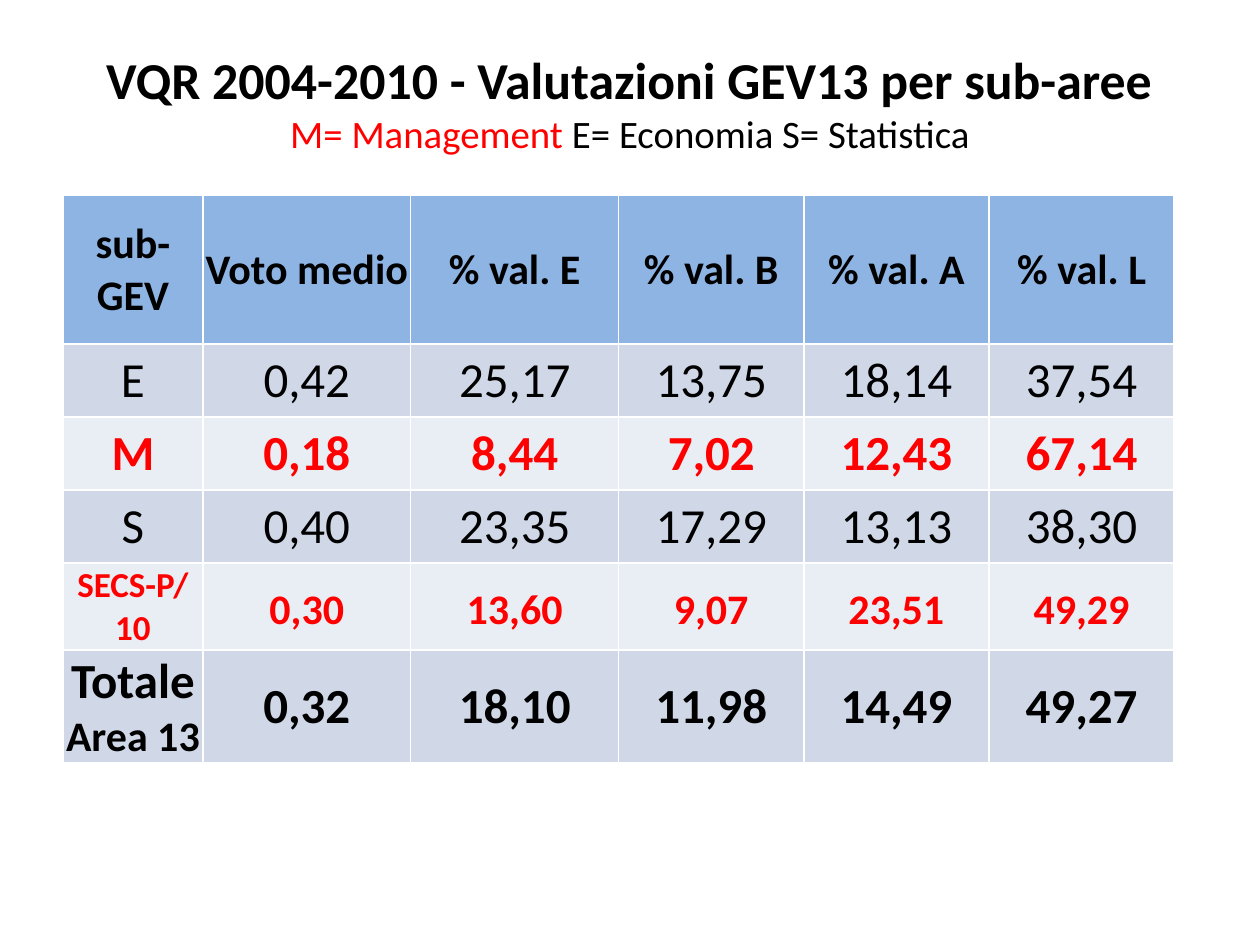
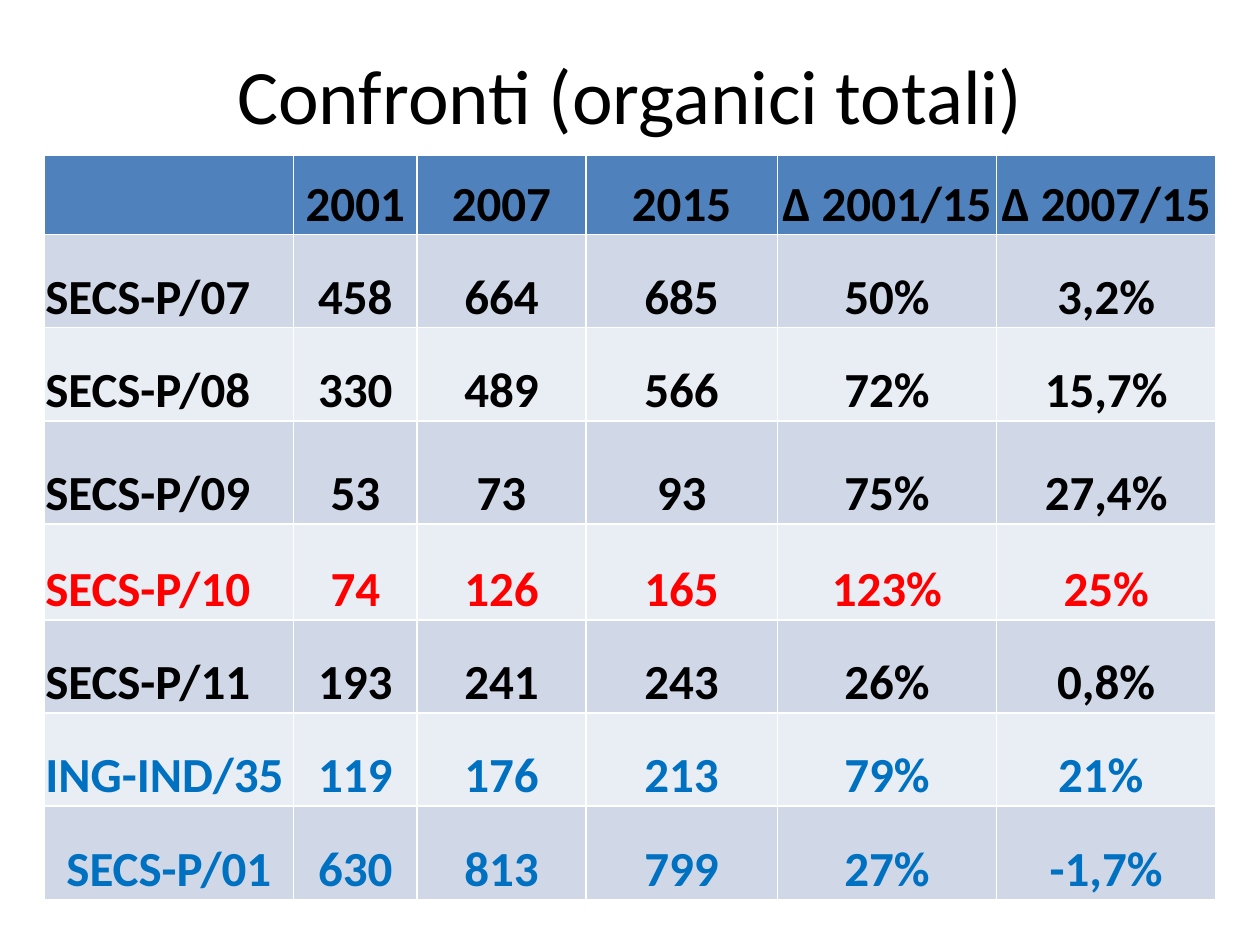
from pptx import Presentation
from pptx.dml.color import RGBColor
from pptx.enum import text
from pptx.util import Inches, Pt

FONT = "Calibri"
BLACK = RGBColor(0x00, 0x00, 0x00)
RED = RGBColor(0xFF, 0x00, 0x00)
BLUE = RGBColor(0x00, 0x70, 0xC0)
HEADER_LIGHT = RGBColor(0x8E, 0xB4, 0xE3)
HEADER_DARK = RGBColor(0x4F, 0x81, 0xBD)
BANDS = (RGBColor(0xD0, 0xD8, 0xE8), RGBColor(0xE9, 0xED, 0xF4))

TITLE_BOX = (0.5, 0.3, 9, 1.25)
TIGHT = (0.01, 0.01, 0.01, 0)
WIDE = (0.05, 0, 0.05, 0)
CENTER, LEFT = text.PP_ALIGN.CENTER, text.PP_ALIGN.LEFT
MIDDLE, BOTTOM = text.MSO_ANCHOR.MIDDLE, text.MSO_ANCHOR.BOTTOM

# Sub-area evaluations: each row has a label, its values and their format
EVALUATION_HEADER = ["sub-GEV", "Voto medio", "% val. E", "% val. B", "% val. A", "% val. L"]
EVALUATIONS = [
    (["E", "0,42", "25,17", "13,75", "18,14", "37,54"], dict(bold=False)),
    (["M", "0,18", "8,44", "7,02", "12,43", "67,14"], dict(color=RED)),
    (["S", "0,40", "23,35", "17,29", "13,13", "38,30"], dict(bold=False)),
    (["SECS-P/10", "0,30", "13,60", "9,07", "23,51", "49,29"], dict(color=RED, size=24)),
    (["Totale\nArea 13", "0,32", "18,10", "11,98", "14,49", "49,27"], {}),
]

# Staff by scientific sector
STAFF_HEADER = ["", "2001", "2007", "2015", "∆ 2001/15", "∆ 2007/15"]
STAFF = [
    (["SECS-P/07", "458", "664", "685", "50%", "3,2%"], BLACK),
    (["SECS-P/08", "330", "489", "566", "72%", "15,7%"], BLACK),
    (["SECS-P/09", "53", "73", "93", "75%", "27,4%"], BLACK),
    (["SECS-P/10", "74", "126", "165", "123%", "25%"], RED),
    (["SECS-P/11", "193", "241", "243", "26%", "0,8%"], BLACK),
    (["ING-IND/35", "119", "176", "213", "79%", "21% "], BLUE),
    (["SECS-P/01", "630", "813", "799", "27%", "-1,7%"], BLUE),
]


def format_font(font, size=28, bold=True, color=BLACK):
    for name, value in dict(name=FONT, size=Pt(size), bold=bold).items():
        setattr(font, name, value)
    font.color.rgb = color


def set_margins(target, margins):
    for side, value in zip(("left", "top", "right", "bottom"), margins):
        setattr(target, f"margin_{side}", Inches(value))


def add_title_slide(prs, lines):
    """Add a title-only slide; each title line is a list of (text, format)."""
    s = prs.slides.add_slide(prs.slide_layouts[5])
    sp = s.shapes.title
    sp.left, sp.top, sp.width, sp.height = map(Inches, TITLE_BOX)
    tf = sp.text_frame
    tf.word_wrap = True
    tf.auto_size = text.MSO_AUTO_SIZE.NONE
    tf.vertical_anchor = text.MSO_ANCHOR.TOP
    set_margins(tf, (0.1, 0.08, 0.1, 0.05))
    p = tf.paragraphs[0]
    p.alignment = CENTER
    for i, line in enumerate(lines):
        if i:
            p.add_line_break()
        for words, style in line:
            r = p.add_run()
            r.text = words
            format_font(r.font, **style)
    return s


def fill_cell(cell, words, anchor, align=CENTER, margins=TIGHT, spacing=None, **style):
    cell.vertical_anchor = anchor
    set_margins(cell, margins)
    cell.text = words
    for p in cell.text_frame.paragraphs:
        p.alignment = align
        if spacing:
            p.line_spacing = spacing
        for r in p.runs:
            format_font(r.font, **style)


def add_grid(s, left, top, widths, heights, header_fill):
    """Add an empty table with a coloured header and alternating bands."""
    frame = s.shapes.add_table(len(heights), len(widths), Inches(left), Inches(top),
                               Inches(sum(widths)), Inches(sum(heights)))
    table = frame.table
    for column, width in zip(table.columns, widths):
        column.width = Inches(width)
    for i, (row, height) in enumerate(zip(table.rows, heights)):
        row.height = Inches(height)
        for cell in row.cells:
            cell.fill.solid()
            cell.fill.fore_color.rgb = BANDS[(i - 1) % 2] if i else header_fill
    return table


def add_evaluation_table(s, left, top):
    table = add_grid(s, left, top, [1.11] + [1.65] * 2 + [1.47] * 3,
                     [1.18] + [0.58] * 5, HEADER_LIGHT)
    for j, words in enumerate(EVALUATION_HEADER):
        fill_cell(table.cell(0, j), words, MIDDLE, size=24)
    for i, (values, style) in enumerate(EVALUATIONS, 1):
        for j, words in enumerate(values):
            fill_cell(table.cell(i, j), words, MIDDLE, **style)
    # The sector row has a smaller label and looser values
    sector = 4
    values, style = EVALUATIONS[sector - 1]
    fill_cell(table.cell(sector, 0), values[0], MIDDLE, size=20, color=RED)
    for j, words in enumerate(values[1:], 1):
        fill_cell(table.cell(sector, j), words, MIDDLE, margins=WIDE, spacing=1.15, **style)
    # Second line of the total label
    total = table.cell(len(EVALUATIONS), 0).text_frame
    total.paragraphs[1].runs[0].font.size = Pt(24)


def add_staff_table(s, left, top):
    table = add_grid(s, left, top, [1.98, 0.98, 1.34, 1.52, 1.74, 1.74],
                     [0.63, 0.74, 0.74, 0.82, 0.76] + [0.74] * 3, HEADER_DARK)
    for j, words in enumerate(STAFF_HEADER):
        fill_cell(table.cell(0, j), words, BOTTOM)
    for i, (values, color) in enumerate(STAFF, 1):
        for j, words in enumerate(values):
            # Labels sit left, except the last one
            align = LEFT if j == 0 and i < len(STAFF) else CENTER
            fill_cell(table.cell(i, j), words, BOTTOM, align, color=color)


def main():
    prs = Presentation()
    prs.slide_width, prs.slide_height = Inches(10), Inches(7.5)

    # Evaluations by sub-area
    legend = dict(size=22.2, bold=False)
    s = add_title_slide(prs, [
        [("VQR 2004-2010 - Valutazioni GEV13 per sub-aree", dict(size=29.6))],
        [("M= Management ", dict(legend, color=RED)),
         ("E= Economia S= Statistica", legend)],
    ])
    add_evaluation_table(s, 0.5, 1.55)

    # Staff comparison
    s = add_title_slide(prs, [[("Confronti (organici totali)", dict(size=44, bold=False))]])
    add_staff_table(s, 0.35, 1.23)

    prs.save("out.pptx")


if __name__ == "__main__":
    main()
